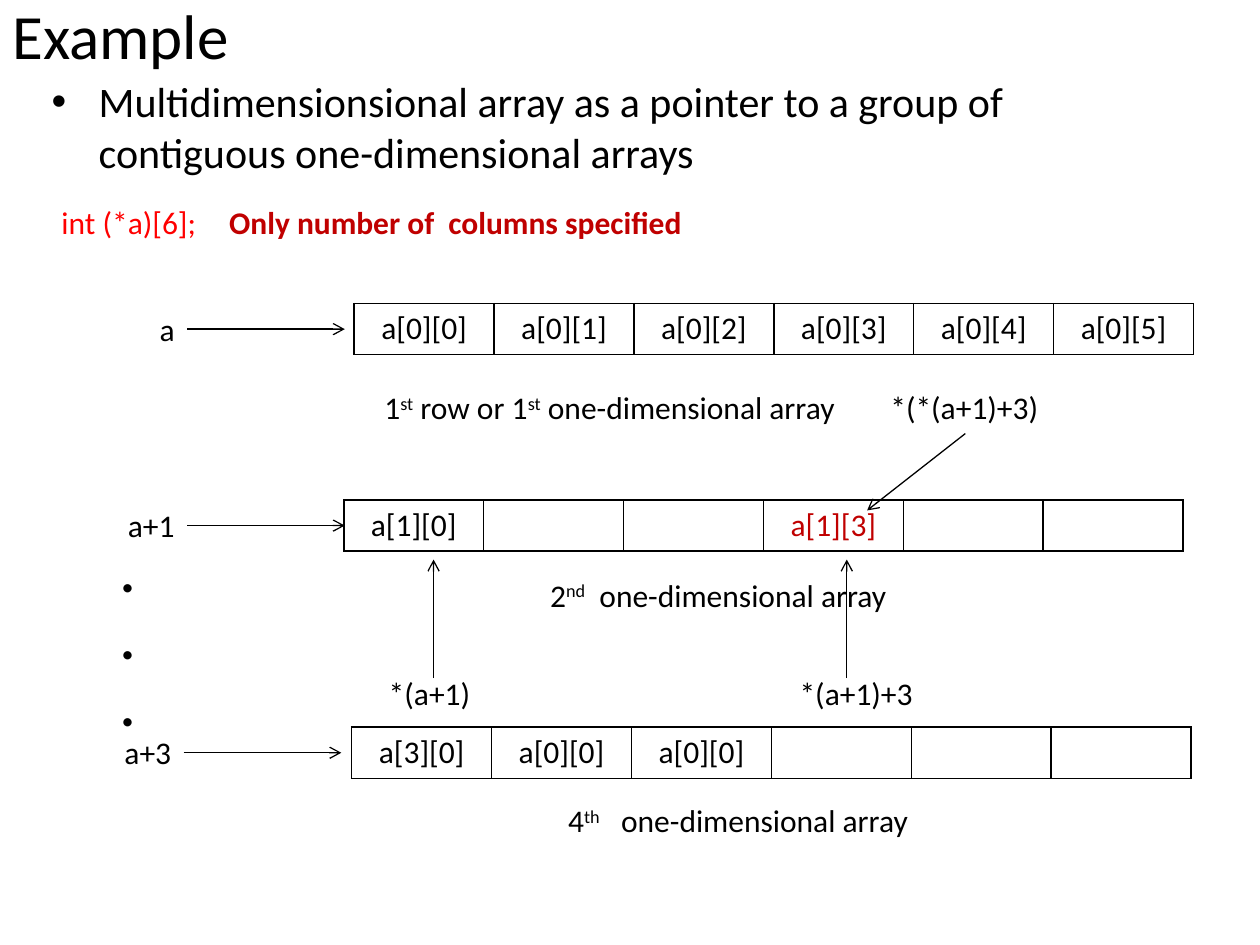
import pptx
import pptx.dml.color
import pptx.enum.shapes
import pptx.enum.text
import pptx.util
from lxml import etree
from pptx.oxml.ns import qn

Cm, Pt = pptx.util.Cm, pptx.util.Pt
LEFT, CENTER, RIGHT = (getattr(pptx.enum.text.PP_ALIGN, name) for name in ("LEFT", "CENTER", "RIGHT"))
BLACK, RED, DARK_RED = "000000", "FF0000", "C00000"

COLUMN_WIDTH, ROW_HEIGHT = 2.82, 1.03
TEXT_HEIGHT, LABEL_WIDTH, ARROW_LENGTH = 1.02, 2.58, 3.18

# Array rows: top, table left, label left, label, cells
ARRAY_ROWS = [
    (6.12, 7.14, 1.19, "a", ["a[0][0]", "a[0][1]", "a[0][2]", "a[0][3]", "a[0][4]", "a[0][5]"]),
    (10.08, 6.93, 1.19, "a+1", ["a[1][0]", "", "", "a[1][3]", "", ""]),
    (14.66, 7.09, 1.12, "a+3", ["a[3][0]", "a[0][0]", "a[0][0]", "", "", ""]),
]
HIGHLIGHTED_CELL = "a[1][3]"

# Texts: left, top, width, height, text, alignment, format. Superscripts stand between ^ marks.
TEXTS = [
    (0, 0, 22.86, 1.4, "Example", LEFT, {"size": Pt(36)}),
    (1.98, 10.69, 1.19, 4.37, ".\n.\n.", CENTER, {"size": Pt(32), "bold": True}),
    (0.99, 3.96, 3.25, TEXT_HEIGHT, "int (*a)[6];", LEFT, {"color": RED}),
    (4.37, 3.96, 17.65, TEXT_HEIGHT, "Only number of  columns specified", LEFT,
     {"color": DARK_RED, "bold": True}),
    (6.93, 7.7, 10.72, TEXT_HEIGHT, "1^st^ row or 1^st^ one-dimensional array", CENTER, {}),
    (9.12, 11.48, 10.72, TEXT_HEIGHT, "2^nd^  one-dimensional array", CENTER, {}),
    (9.52, 16.03, 10.72, TEXT_HEIGHT, "4^th^   one-dimensional array", CENTER, {}),
    (7.14, 13.46, 2.59, TEXT_HEIGHT, "*(a+1)", RIGHT, {}),
    (15.47, 13.46, 3.58, TEXT_HEIGHT, "*(a+1)+3", CENTER, {}),
    (17.65, 7.7, 3.58, TEXT_HEIGHT, "*(*(a+1)+3)", CENTER, {}),
]
BULLET = (0.79, 1.4, 23.34, 17.07,
          "Multidimensionsional array as a pointer to a group of contiguous one-dimensional arrays",
          LEFT, {"size": Pt(24)})
POINTER_ARROWS = [
    (8.74, 13.67, 8.74, 11.28),
    (17.07, 13.67, 17.07, 11.28),
    (19.46, 8.74, 17.48, 10.29),
]


def rgb(value):
    return pptx.dml.color.RGBColor.from_string(value)


def write(paragraph, text, alignment, formats):
    paragraph.alignment = alignment
    values = {"name": "Calibri", "size": Pt(18), "color": BLACK, **formats}
    color = values.pop("color")
    for index, piece in enumerate(text.split("^")):
        run = paragraph.add_run()
        run.text = piece
        run.font.color.rgb = rgb(color)
        for attribute, value in values.items():
            setattr(run.font, attribute, value)
        if index % 2:
            run._r.get_or_add_rPr().set("baseline", "30000")


def add_text(slide, left, top, width, height, text, alignment, formats):
    frame = slide.shapes.add_textbox(Cm(left), Cm(top), Cm(width), Cm(height)).text_frame
    frame.word_wrap = True
    for index, line in enumerate(text.split("\n")):
        paragraph = frame.add_paragraph() if index else frame.paragraphs[0]
        write(paragraph, line, alignment, formats)
    return frame


def add_bullet(paragraph):
    properties = paragraph._p.get_or_add_pPr()
    properties.set("marL", str(Cm(0.95)))
    properties.set("indent", str(-Cm(0.95)))
    etree.SubElement(properties, qn("a:buFont")).set("typeface", "Arial")
    etree.SubElement(properties, qn("a:buChar")).set("char", "•")


def add_arrow(slide, *ends):
    arrow = slide.shapes.add_connector(
        pptx.enum.shapes.MSO_CONNECTOR.STRAIGHT, *(Cm(end) for end in ends))
    arrow.line.color.rgb = rgb(BLACK)
    arrow.line.width = Pt(0.75)
    etree.SubElement(arrow.line._get_or_add_ln(), qn("a:tailEnd")).set("type", "arrow")
    etree.SubElement(arrow._element.spPr, qn("a:effectLst"))


def add_borders(cell):
    properties = cell._tc.get_or_add_tcPr()
    for position, side in enumerate(("lnL", "lnR", "lnT", "lnB")):
        line = etree.Element(qn("a:" + side), w=str(Pt(1)))
        fill = etree.SubElement(line, qn("a:solidFill"))
        etree.SubElement(fill, qn("a:srgbClr")).set("val", BLACK)
        properties.insert(position, line)


def add_array_row(slide, top, left, label_left, label, cells):
    table = slide.shapes.add_table(
        1, len(cells), Cm(left), Cm(top), Cm(COLUMN_WIDTH * len(cells)), Cm(ROW_HEIGHT)).table
    table.first_row = table.horz_banding = False
    for column, text in enumerate(cells):
        table.columns[column].width = Cm(COLUMN_WIDTH)
        cell = table.cell(0, column)
        cell.fill.background()
        add_borders(cell)
        color = DARK_RED if text == HIGHLIGHTED_CELL else BLACK
        write(cell.text_frame.paragraphs[0], text, CENTER, {"color": color})
    add_text(slide, label_left, top, LABEL_WIDTH, TEXT_HEIGHT, label, RIGHT, {})
    start, middle = label_left + LABEL_WIDTH, top + ROW_HEIGHT / 2
    add_arrow(slide, start, middle, start + ARROW_LENGTH, middle)


def main():
    presentation = pptx.Presentation()
    presentation.slide_width, presentation.slide_height = Cm(25.4), Cm(19.05)
    slide = presentation.slides.add_slide(presentation.slide_layouts[6])
    add_bullet(add_text(slide, *BULLET).paragraphs[0])
    for row in ARRAY_ROWS:
        add_array_row(slide, *row)
    title, *others = [add_text(slide, *text) for text in TEXTS]
    title.vertical_anchor = pptx.enum.text.MSO_ANCHOR.MIDDLE
    for ends in POINTER_ARROWS:
        add_arrow(slide, *ends)
    presentation.save("out.pptx")


if __name__ == "__main__":
    main()
